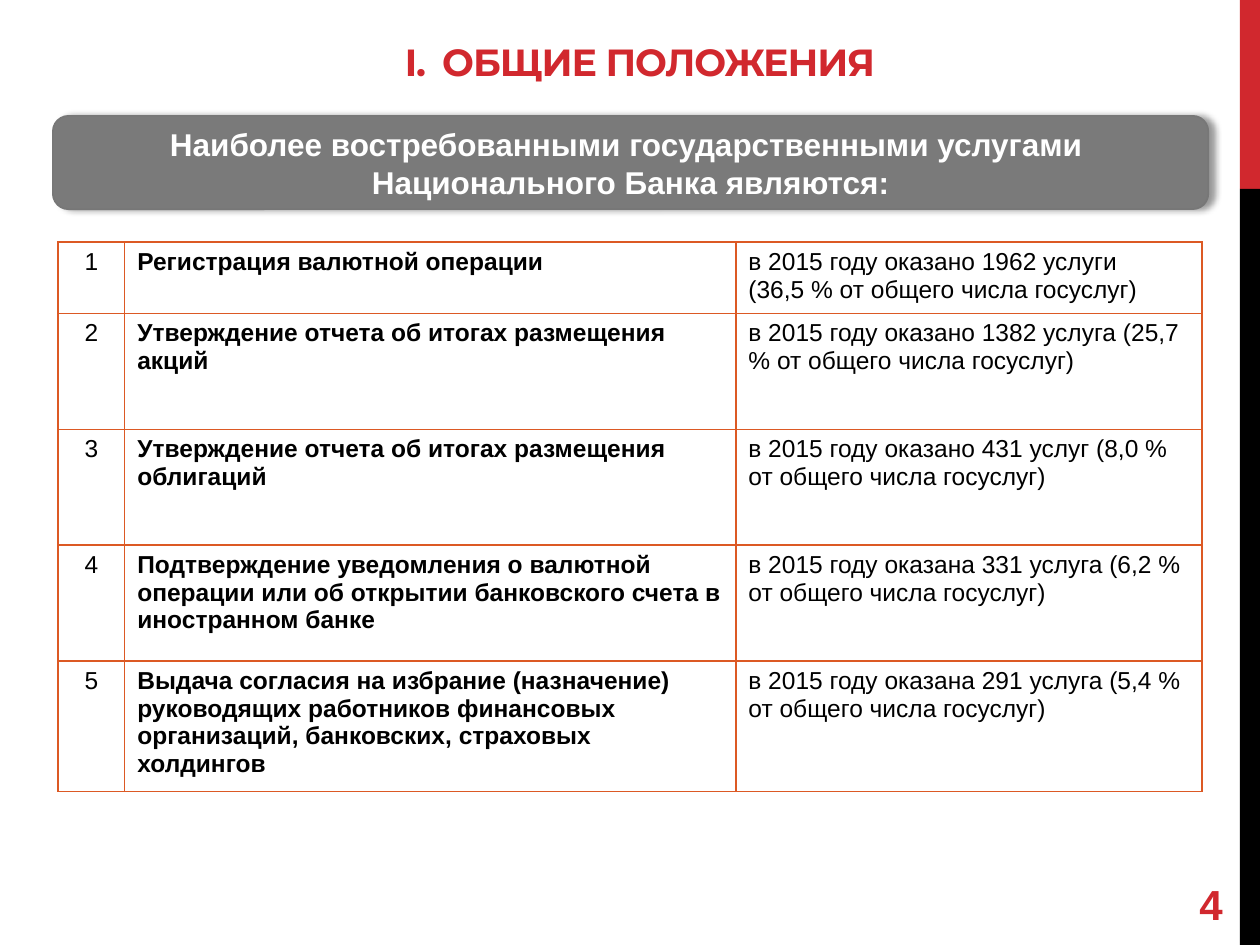
"""Build the slide listing the most requested state services."""
from typing import NamedTuple

import lxml.etree
import pptx
import pptx.dml.color
import pptx.enum.shapes
import pptx.enum.text
import pptx.oxml
import pptx.oxml.ns
import pptx.util

Inches = pptx.util.Inches
Pt = pptx.util.Pt
Align = pptx.enum.text.PP_ALIGN
Anchor = pptx.enum.text.MSO_ANCHOR
Kind = pptx.enum.shapes.MSO_SHAPE

RED, BLACK, WHITE = "D1282E", "000000", "FFFFFF"
GREY, EDGE, ORANGE = "7A7A7A", "777777", "DC5924"


class Box(NamedTuple):
    left: float
    top: float
    width: float
    height: float

    def place(self) -> list:
        return [Inches(size) for size in self]


class Bar(NamedTuple):
    box: Box
    fill: str


class Service(NamedTuple):
    name: str
    count: str
    height: float


BARS = [
    Bar(Box(9.84, 0, 0.16, 1.5), RED),
    Bar(Box(9.84, 1.5, 0.16, 6), BLACK),
]
WIDTHS = [0.53, 4.85, 3.7]
SERVICES = [
    Service("Регистрация валютной операции",
            "в 2015 году оказано 1962 услуги \v(36,5 % от общего числа госуслуг)", 0.52),
    Service("Утверждение отчета об итогах размещения акций",
            "в 2015 году оказано 1382 услуга (25,7 % от общего числа госуслуг)", 0.92),
    Service("Утверждение отчета об итогах размещения облигаций",
            "в 2015 году оказано 431 услуг (8,0 % от общего числа госуслуг)", 0.92),
    Service("Подтверждение уведомления о валютной операции или об открытии "
            "банковского счета в иностранном банке",
            "в 2015 году оказана 331 услуга (6,2 % от общего числа госуслуг)", 0.92),
    Service("Выдача согласия на избрание (назначение) руководящих работников "
            "финансовых организаций, банковских, страховых холдингов",
            "в 2015 году оказана 291 услуга (5,4 % от общего числа госуслуг)", 0.95),
]


def color(code: str) -> pptx.dml.color.RGBColor:
    return pptx.dml.color.RGBColor.from_string(code)


def style(para, size: float, tint: str, bold: bool, align, face: str = "Arial") -> None:
    para.alignment = align
    font = para.font
    font.name, font.size, font.bold = face, Pt(size), bold
    font.color.rgb = color(tint)


def draw_bar(slide, bar: Bar) -> None:
    shape = slide.shapes.add_shape(Kind.RECTANGLE, *bar.box.place())
    shape.shadow.inherit = False
    shape.fill.solid()
    shape.fill.fore_color.rgb = color(bar.fill)
    shape.line.fill.background()


def draw_title(slide) -> None:
    frame = slide.shapes.add_textbox(*Box(0.58, 0.33, 9, 0.42).place()).text_frame
    frame.word_wrap = True
    frame.vertical_anchor = Anchor.BOTTOM
    para = frame.paragraphs[0]
    style(para, 21.6, RED, True, Align.CENTER, "Montserrat")
    for text, size in [("I.", 21.6), (" ", 32.4), ("ОБЩИЕ ПОЛОЖЕНИЯ", 21.6)]:
        run = para.add_run()
        run.text = text
        run.font.size = Pt(size)
        run.font._element.set("spc", "-60")


def draw_number(slide) -> None:
    frame = slide.shapes.add_textbox(*Box(9.42, 6.92, 0.42, 0.5).place()).text_frame
    frame.vertical_anchor = Anchor.MIDDLE
    frame.word_wrap = True
    frame.text = "4"
    style(frame.paragraphs[0], 24, RED, True, Align.LEFT)


def add_shadow(shape) -> None:
    shape.shadow.inherit = False
    effects = shape._element.spPr.find(pptx.oxml.ns.qn("a:effectLst"))
    effects.append(pptx.oxml.parse_xml(
        f'<a:outerShdw {pptx.oxml.ns.nsdecls("a")} blurRad="{Pt(4)}" dist="{Pt(3)}" '
        f'dir="0" rotWithShape="0"><a:srgbClr val="{BLACK}"><a:alpha val="40000"/>'
        '</a:srgbClr></a:outerShdw>'))


def draw_banner(slide) -> None:
    shape = slide.shapes.add_shape(
        Kind.ROUNDED_RECTANGLE, *Box(0.42, 0.92, 9.17, 0.74).place())
    shape.fill.solid()
    shape.fill.fore_color.rgb = color(GREY)
    shape.line.color.rgb = color(EDGE)
    shape.line.width = Pt(1)
    add_shadow(shape)
    frame = shape.text_frame
    frame.word_wrap = False
    frame.vertical_anchor = Anchor.MIDDLE
    frame.text = ("Наиболее востребованными государственными услугами \n"
                  "Национального Банка являются:")
    for para in frame.paragraphs:
        style(para, 18, WHITE, True, Align.CENTER)


def add_border(cell) -> None:
    props = cell._tc.get_or_add_tcPr()
    for side in ("lnL", "lnR", "lnT", "lnB"):
        line = lxml.etree.SubElement(props, pptx.oxml.ns.qn(f"a:{side}"), w=str(Pt(1)))
        fill = lxml.etree.SubElement(line, pptx.oxml.ns.qn("a:solidFill"))
        lxml.etree.SubElement(fill, pptx.oxml.ns.qn("a:srgbClr"), val=ORANGE)


def draw_table(slide) -> None:
    box = Box(0.46, 1.92, sum(WIDTHS), sum(item.height for item in SERVICES))
    table = slide.shapes.add_table(len(SERVICES), len(WIDTHS), *box.place()).table
    table.first_row = table.horz_banding = False
    for col, width in zip(table.columns, WIDTHS):
        col.width = Inches(width)
    for index, item in enumerate(SERVICES):
        table.rows[index].height = Inches(item.height)
        texts = [str(index + 1), item.name, item.count]
        for spot, (cell, text) in enumerate(zip(table.rows[index].cells, texts)):
            add_border(cell)
            cell.fill.background()
            para = cell.text_frame.paragraphs[0]
            para.text = text
            style(para, 14, BLACK, spot == 1, Align.LEFT if spot else Align.CENTER)


def main() -> None:
    deck = pptx.Presentation()
    deck.slide_width, deck.slide_height = Inches(10), Inches(7.5)
    slide = deck.slides.add_slide(deck.slide_layouts[6])
    for bar in BARS:
        draw_bar(slide, bar)
    draw_title(slide)
    draw_number(slide)
    draw_table(slide)
    draw_banner(slide)
    deck.save("out.pptx")


if __name__ == "__main__":
    main()
